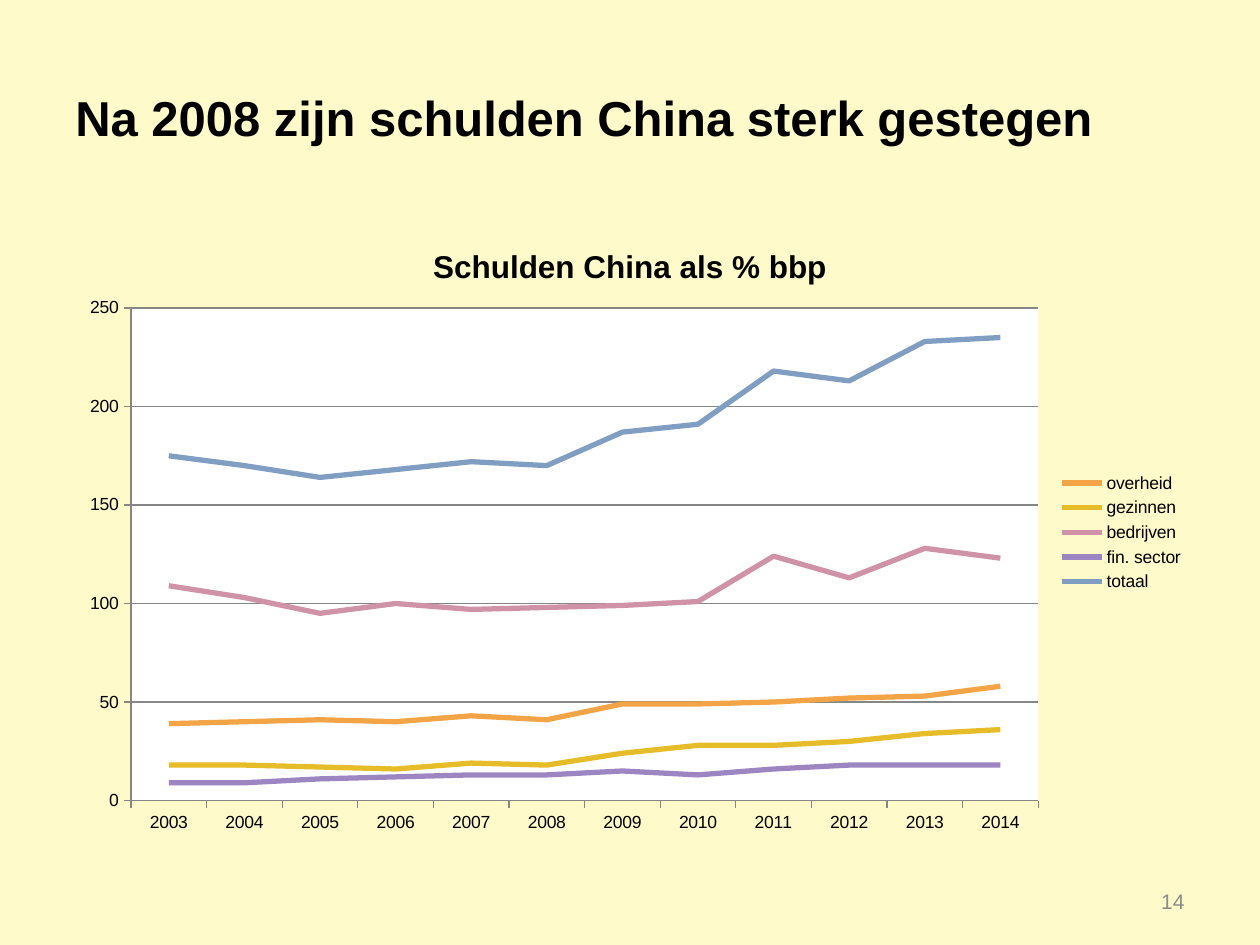
from lxml.etree import SubElement
from pptx import Presentation
from pptx.chart.data import CategoryChartData
from pptx.dml.color import RGBColor as Rgb
from pptx.enum.chart import XL_CHART_TYPE as ChartType, XL_LEGEND_POSITION as LegendPos
from pptx.enum.chart import XL_TICK_MARK as TickMark
from pptx.enum.text import MSO_ANCHOR as Anchor, PP_ALIGN as Align
from pptx.oxml import parse_xml
from pptx.oxml.ns import nsdecls, qn
from pptx.util import Cm, Pt

# Content
TITLE = "Na 2008 zijn schulden China sterk gestegen"
PAGE_NUMBER = "14"
CHART_TITLE = "Schulden China als % bbp"
YEARS = [str(year) for year in range(2003, 2015)]
DEBTS = [
    ("overheid", "F3A447", (39, 40, 41, 40, 43, 41, 49, 49, 50, 52, 53, 58)),
    ("gezinnen", "E7BC29", (18, 18, 17, 16, 19, 18, 24, 28, 28, 30, 34, 36)),
    ("bedrijven", "D092A7", (109, 103, 95, 100, 97, 98, 99, 101, 124, 113, 128, 123)),
    ("fin. sector", "9C85C0", (9, 9, 11, 12, 13, 13, 15, 13, 16, 18, 18, 18)),
    ("totaal", "809EC2", (175, 170, 164, 168, 172, 170, 187, 191, 218, 213, 233, 235)),
]

THEME = {
    "font": "Arial", "page": "FEFAC9", "plot": "FFFFFF", "text": "000000",
    "muted": "8C8C8C", "axis": "868686",
    "title": 28, "chart_title": 18, "labels": 10, "number": 12,
    "series_line": 3, "axis_line": 0.75,
}
# Plot area as shares of the chart frame
PLOT = {"x": 0.06, "y": 0.14, "w": 0.8, "h": 0.79}

WIDTH, HEIGHT, MARGIN = 25.4, 19.05, 1.27


def style_font(font, size, color="text", bold=False):
    font.name = THEME["font"]
    font.size = Pt(THEME[size])
    font.bold = bold
    font.color.rgb = Rgb.from_string(THEME[color])


def add_text(page, text, frame, size, color="text", bold=False, align=Align.LEFT):
    box = page.shapes.add_textbox(*(Cm(length) for length in frame))
    box.text_frame.word_wrap = True
    box.text_frame.vertical_anchor = Anchor.MIDDLE
    box.text_frame.text = text
    para = box.text_frame.paragraphs[0]
    para.alignment = align
    style_font(para.runs[0].font, size, color, bold)


def style_line(line, color, width):
    line.color.rgb = Rgb.from_string(color)
    line.width = Pt(width)


def style_plot_area(chart):
    """Place the inner plot area and give it a fill."""
    area = chart.element.find(".//" + qn("c:plotArea"))
    for old in area.findall(qn("c:layout")):
        area.remove(old)
    layout = parse_xml(f"<c:layout {nsdecls('c')}/>")
    manual = SubElement(layout, qn("c:manualLayout"))
    settings = {"layoutTarget": "inner", "xMode": "edge", "yMode": "edge", **PLOT}
    for name, value in settings.items():
        SubElement(manual, qn(f"c:{name}")).set("val", str(value))
    area.insert(0, layout)
    area.append(parse_xml(
        f"<c:spPr {nsdecls('c', 'a')}><a:solidFill>"
        f"<a:srgbClr val=\"{THEME['plot']}\"/></a:solidFill></c:spPr>"))


def add_debt_chart(page, frame):
    data = CategoryChartData()
    data.categories = YEARS
    for name, _, values in DEBTS:
        data.add_series(name, values)
    chart = page.shapes.add_chart(
        ChartType.LINE, *(Cm(length) for length in frame), data).chart
    style_font(chart.font, "labels")

    # Title and legend
    chart.has_title = True
    chart.chart_title.include_in_layout = False
    chart.chart_title.text_frame.text = CHART_TITLE
    span = chart.chart_title.text_frame.paragraphs[0].runs[0]
    style_font(span.font, "chart_title", bold=True)
    chart.has_legend = True
    chart.legend.position = LegendPos.RIGHT
    chart.legend.include_in_layout = False

    # Axes and grid
    values = chart.value_axis
    values.minimum_scale, values.maximum_scale, values.major_unit = 0, 250, 50
    values.has_major_gridlines = True
    for axis in (chart.category_axis, values):
        axis.major_tick_mark = TickMark.OUTSIDE
        axis.minor_tick_mark = TickMark.NONE
    for line in (chart.category_axis.format.line, values.format.line,
                 values.major_gridlines.format.line):
        style_line(line, THEME["axis"], THEME["axis_line"])

    # Series
    for series, (_, color, _) in zip(chart.plots[0].series, DEBTS):
        series.smooth = False
        style_line(series.format.line, color, THEME["series_line"])
    style_plot_area(chart)


def main():
    deck = Presentation()
    deck.slide_width, deck.slide_height = Cm(WIDTH), Cm(HEIGHT)
    page = deck.slides.add_slide(deck.slide_layouts[6])
    page.background.fill.solid()
    page.background.fill.fore_color.rgb = Rgb.from_string(THEME["page"])

    inner = WIDTH - 2 * MARGIN
    add_text(page, TITLE, (MARGIN, 0.76, inner, 3.18), "title", bold=True)
    add_debt_chart(page, (MARGIN, 4.45, inner, 12.57))
    number_width = 5.92
    add_text(page, PAGE_NUMBER, (WIDTH - MARGIN - number_width, 17.65, number_width, 1.02),
             "number", "muted", align=Align.RIGHT)
    deck.save("out.pptx")


if __name__ == "__main__":
    main()
